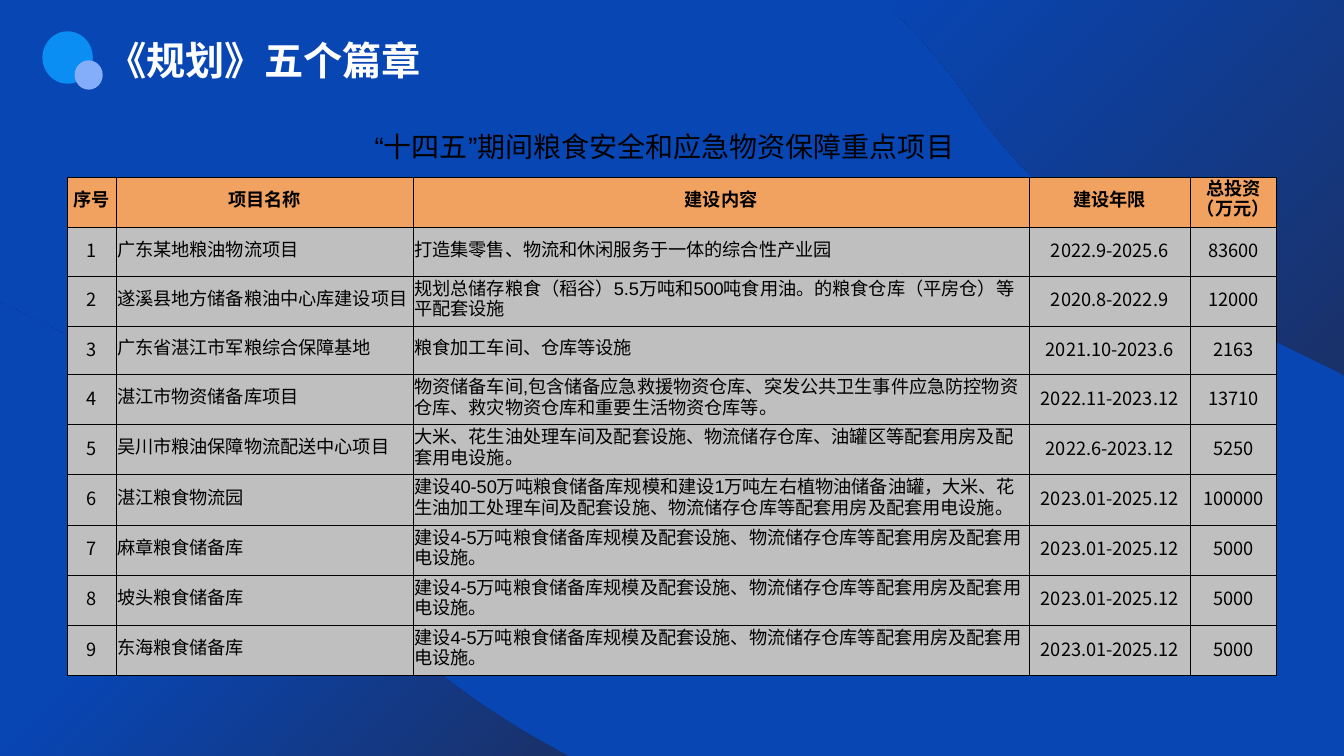
from dataclasses import dataclass

from lxml import etree
from pptx import Presentation
from pptx import util as u
from pptx.dml import color as dml
from pptx.enum import shapes, text
from pptx.oxml import ns

Cm = u.Cm


@dataclass(frozen=True)
class Theme:
    background: str = "0846B4"
    deep: str = "1A3169"
    large_dot: str = "0B8EF4"
    small_dot: str = "84AEFA"
    white: str = "FFFFFF"
    black: str = "000000"
    header: str = "F1A261"
    body: str = "BFBFBF"
    font: str = "Arial"
    number_font: str = "Noto Sans CJK SC"
    title_size: float = 28
    caption_size: float = 20
    table_size: float = 13
    border: float = 0.5


THEME = Theme()
CENTER = text.PP_ALIGN.CENTER
LEFT = text.PP_ALIGN.LEFT

UPPER_WAVE = [
    [(22.23, 0)], [(33.87, 0)], [(33.87, 9.47)], [(33.71, 9.37)],
    [(30.2, 7.65), (26.7, 5.92), (24.41, 2.51)],
    [(23.85, 1.68), (23.19, 0.91), (22.48, 0.25)],
]
LOWER_WAVE = [
    [(0, 7.62)], [(0.53, 7.87)],
    [(3.48, 9.32), (6.3, 10.95), (8.18, 13.84)],
    [(9.53, 15.93), (11.35, 17.32), (13.36, 18.52)],
    [(14.33, 19.05)], [(0, 19.05)],
]

COLUMN_WIDTHS = [1.22, 7.49, 15.52, 4.06, 2.18]
COLUMN_ALIGNMENTS = [CENTER, LEFT, LEFT, CENTER, CENTER]
COLUMN_FONTS = [THEME.number_font, THEME.font, THEME.font, THEME.number_font, THEME.number_font]
ROW_HEIGHT = 1.22
HEADINGS = ["序号", "项目名称", "建设内容", "建设年限", "总投资\n（万元）"]
DEPOT = "建设4-5万吨粮食储备库规模及配套设施、物流储存仓库等配套用房及配套用电设施。"
PROJECTS = [
    ("广东某地粮油物流项目", "打造集零售、物流和休闲服务于一体的综合性产业园", "2022.9-2025.6", "83600"),
    ("遂溪县地方储备粮油中心库建设项目",
     "规划总储存粮食（稻谷）5.5万吨和500吨食用油。的粮食仓库（平房仓）等平配套设施",
     "2020.8-2022.9", "12000"),
    ("广东省湛江市军粮综合保障基地", "粮食加工车间、仓库等设施", "2021.10-2023.6", "2163"),
    ("湛江市物资储备库项目",
     "物资储备车间,包含储备应急救援物资仓库、突发公共卫生事件应急防控物资仓库、救灾物资仓库和重要生活物资仓库等。",
     "2022.11-2023.12", "13710"),
    ("吴川市粮油保障物流配送中心项目",
     "大米、花生油处理车间及配套设施、物流储存仓库、油罐区等配套用房及配套用电设施。",
     "2022.6-2023.12", "5250"),
    ("湛江粮食物流园",
     "建设40-50万吨粮食储备库规模和建设1万吨左右植物油储备油罐，大米、花生油加工处理车间及配套设施、"
     "物流储存仓库等配套用房及配套用电设施。",
     "2023.01-2025.12", "100000"),
    *[(f"{place}粮食储备库", DEPOT, "2023.01-2025.12", "5000") for place in ("麻章", "坡头", "东海")],
]


def rgb(value):
    return dml.RGBColor.from_string(value)


def write(frame, content, size, color=THEME.black, font=THEME.font, bold=False,
          align=LEFT, spacing=None):
    frame.word_wrap = True
    for index, line in enumerate(content.split("\n")):
        paragraph = frame.add_paragraph() if index else frame.paragraphs[0]
        paragraph.alignment = align
        if spacing:
            paragraph.line_spacing = spacing
        run = paragraph.add_run()
        run.text = line
        run.font.size = u.Pt(size)
        run.font.bold = bold
        run.font.color.rgb = rgb(color)
        run.font.name = font
        east_asian = etree.SubElement(run.font._element, ns.qn("a:ea"))
        east_asian.set("typeface", font)


def add_text(slide, box, content, **style):
    shape = slide.shapes.add_textbox(*map(Cm, box))
    write(shape.text_frame, content, **style)


def add_dot(slide, box, color):
    shape = slide.shapes.add_shape(shapes.MSO_SHAPE.OVAL, *map(Cm, box))
    shape.shadow.inherit = False
    shape.fill.solid()
    shape.fill.fore_color.rgb = rgb(color)
    shape.line.fill.background()


def curve_points(start, controls, steps=24):
    if len(controls) == 1:
        return controls
    knots = [start, *controls]
    weights = (1, 3, 3, 1)
    return [
        tuple(sum(weight * (1 - t) ** (3 - i) * t ** i * knot[axis]
                  for i, (weight, knot) in enumerate(zip(weights, knots)))
              for axis in (0, 1))
        for t in (step / steps for step in range(1, steps + 1))
    ]


def add_wave(slide, segments, first_stop):
    points = list(segments[0])
    for controls in segments[1:]:
        points += curve_points(points[-1], controls)
    points = [(Cm(x), Cm(y)) for x, y in points]
    builder = slide.shapes.build_freeform(*points[0])
    builder.add_line_segments(points[1:], close=True)
    shape = builder.convert_to_shape()
    shape.shadow.inherit = False
    shape.line.fill.background()
    shape.fill.gradient()
    stops = shape.fill.gradient_stops
    for stop, position, color in zip(stops, (first_stop, 1), (THEME.background, THEME.deep)):
        stop.position = position
        stop.color.rgb = rgb(color)
    linear = shape._element.spPr.find(".//" + ns.qn("a:lin"))
    radial = etree.Element(ns.qn("a:path"), {"path": "circle"})
    etree.SubElement(radial, ns.qn("a:fillToRect"), {"r": "100000", "b": "100000"})
    linear.getparent().replace(linear, radial)


def add_borders(cell):
    properties = cell._tc.get_or_add_tcPr()
    for index, side in enumerate(("lnL", "lnR", "lnT", "lnB")):
        line = etree.Element(ns.qn(f"a:{side}"), {"w": str(u.Pt(THEME.border))})
        fill = etree.SubElement(line, ns.qn("a:solidFill"))
        etree.SubElement(fill, ns.qn("a:srgbClr"), {"val": THEME.black})
        properties.insert(index, line)


def fill_cell(cell, content, fill, **style):
    cell.margin_left = cell.margin_right = cell.margin_top = Cm(0.03)
    cell.margin_bottom = Cm(0.13)
    cell.vertical_anchor = text.MSO_ANCHOR.MIDDLE
    cell.fill.solid()
    cell.fill.fore_color.rgb = rgb(fill)
    add_borders(cell)
    write(cell.text_frame, content, THEME.table_size, **style)


def add_project_table(slide, left, top):
    row_count = len(PROJECTS) + 1
    table = slide.shapes.add_table(
        row_count, len(HEADINGS), Cm(left), Cm(top),
        Cm(sum(COLUMN_WIDTHS)), Cm(ROW_HEIGHT * row_count)).table
    for column, width in zip(table.columns, COLUMN_WIDTHS):
        column.width = Cm(width)
    for row in table.rows:
        row.height = Cm(ROW_HEIGHT)
    for column, heading in enumerate(HEADINGS):
        fill_cell(table.cell(0, column), heading, THEME.header, bold=True, align=CENTER)
    table.cell(0, len(HEADINGS) - 1).vertical_anchor = text.MSO_ANCHOR.TOP
    for number, project in enumerate(PROJECTS, 1):
        for column, value in enumerate((str(number), *project)):
            fill_cell(table.cell(number, column), value, THEME.body,
                      font=COLUMN_FONTS[column], align=COLUMN_ALIGNMENTS[column])


def main():
    presentation = Presentation()
    presentation.slide_width, presentation.slide_height = Cm(33.87), Cm(19.05)
    slide = presentation.slides.add_slide(presentation.slide_layouts[6])
    slide.background.fill.solid()
    slide.background.fill.fore_color.rgb = rgb(THEME.background)
    add_wave(slide, UPPER_WAVE, 0)
    add_wave(slide, LOWER_WAVE, 0.43)
    add_dot(slide, (1.07, 0.79, 1.27, 1.32), THEME.large_dot)
    add_dot(slide, (1.88, 1.52, 0.71, 0.74), THEME.small_dot)
    add_text(slide, (2.46, 0.79, 9.86, 1.45), "《规划》五个篇章",
             size=THEME.title_size, color=THEME.white, bold=True)
    add_text(slide, (9.19, 2.72, 15.49, 1.27), "“十四五”期间粮食安全和应急物资保障重点项目",
             size=THEME.caption_size, spacing=1.5)
    add_project_table(slide, 1.7, 4.47)
    presentation.save("out.pptx")


if __name__ == "__main__":
    main()
